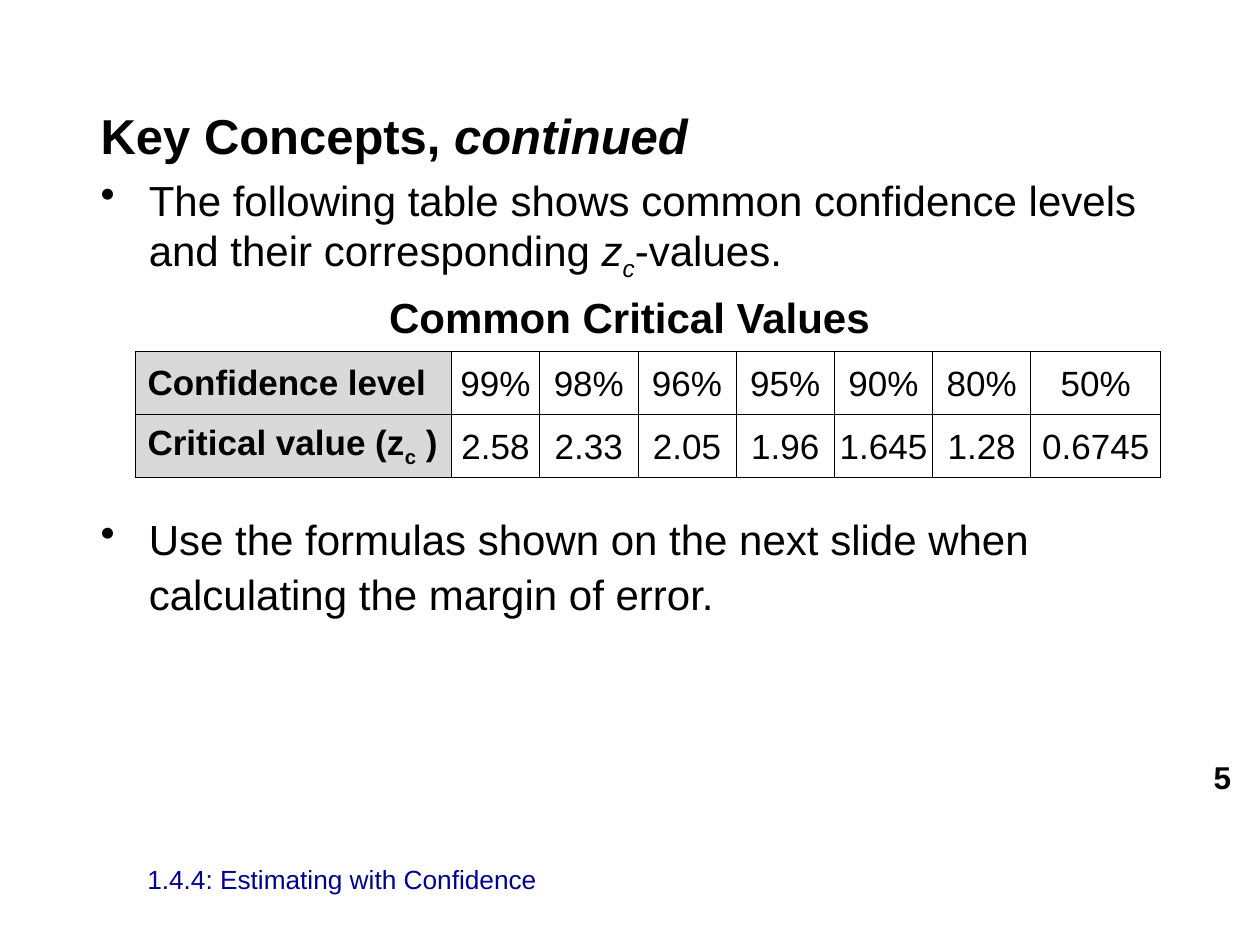
import pptx
import pptx.util
import pptx.dml.color
import pptx.enum.text
import lxml.etree

Cm = pptx.util.Cm
Pt = pptx.util.Pt
Rgb = pptx.dml.color.RGBColor.from_string
Align = pptx.enum.text.PP_ALIGN
Anchor = pptx.enum.text.MSO_ANCHOR
A = "{http://schemas.openxmlformats.org/drawingml/2006/main}"
ink = {"text": "000000", "foot": "000090", "head": "D9D9D9", "cell": "FFFFFF"}


def write(para, runs, size, bold=False, color="text", align=Align.LEFT):
    para.alignment = align
    font = para.font
    font.name, font.size, font.bold = "Arial", Pt(size), bold
    font.color.rgb = Rgb(ink[color])
    for text, style in runs:
        run = para.add_run()
        run.text = text
        if "i" in style:
            run.font.italic = True
        if "s" in style:
            run.font._element.set("baseline", "-25000")


def add_box(left, top, width, height, anchor):
    frame = slide.shapes.add_textbox(Cm(left), Cm(top), Cm(width), Cm(height)).text_frame
    frame.word_wrap = True
    frame.vertical_anchor = anchor
    return frame


deck = pptx.Presentation()
deck.slide_width, deck.slide_height = Cm(25.4), Cm(19.05)
slide = deck.slides.add_slide(deck.slide_layouts[6])

body = add_box(1.78, 1.89, 21.82, 14.52, Anchor.TOP)
lines = [
    ([("Key Concepts, ", ""), ("continued", "i")], 28, True, False, 1.1, 0),
    ([("The following table shows common confidence levels and their corresponding ", ""),
      ("z", "i"), ("c", "is"), ("-values.", "")], 24, False, True, 1, 5.5),
    ([("Common Critical Values", "")], 24, True, False, 1, 5.5),
    ([("Use the formulas shown on the next slide when calculating the margin of error.", "")],
     24, False, True, 1.1, 95),
]
for row, (runs, size, bold, dot, space, gap) in enumerate(lines):
    para = body.paragraphs[0] if row == 0 else body.add_paragraph()
    para.line_spacing = space
    para.space_before = Pt(gap)
    if dot:
        props = para._p.get_or_add_pPr()
        props.set("marL", str(Cm(0.97)))
        props.set("indent", str(-Cm(0.97)))
        lxml.etree.SubElement(props, A + "buChar", char="•")
    write(para, runs, size, bold, align=Align.CENTER if row == 2 else Align.LEFT)

page = add_box(23.04, 15.27, 2.03, 0.79, Anchor.MIDDLE)
write(page.paragraphs[0], [("5", "")], 18, True, align=Align.RIGHT)
foot = add_box(2.72, 17.35, 15.95, 0.74, Anchor.MIDDLE)
write(foot.paragraphs[0], [("1.4.4: Estimating with Confidence", "")], 15, color="foot")

heads = [
    [("Confidence level", "")],
    [("Critical value (z", ""), ("c", "s"), (" )", "")],
]
values = [
    ["99%", "98%", "96%", "95%", "90%", "80%", "50%"],
    ["2.58", "2.33", "2.05", "1.96", "1.645", "1.28", "0.6745"],
]
widths = [6.38, 1.78] + [1.98] * 5 + [2.62]
table = slide.shapes.add_table(2, 8, Cm(2.72), Cm(7.09), Cm(sum(widths)), Cm(2.54)).table
for col, width in zip(table.columns, widths):
    col.width = Cm(width)
for r, (head, nums) in enumerate(zip(heads, values)):
    table.rows[r].height = Cm(1.27)
    for c, runs in enumerate([head] + [[(num, "")] for num in nums]):
        cell = table.cell(r, c)
        cell.vertical_anchor = Anchor.MIDDLE
        if c:
            cell.margin_left = cell.margin_right = cell.margin_top = Cm(0.03)
            cell.margin_bottom = 0
        props = cell._tc.get_or_add_tcPr()
        for side in ("lnL", "lnR", "lnT", "lnB"):
            line = lxml.etree.SubElement(props, A + side, w=str(Pt(0.5)))
            fill = lxml.etree.SubElement(line, A + "solidFill")
            lxml.etree.SubElement(fill, A + "srgbClr", val=ink["text"])
        cell.fill.solid()
        cell.fill.fore_color.rgb = Rgb(ink["cell" if c else "head"])
        write(cell.text_frame.paragraphs[0], runs, 20, c == 0,
              align=Align.CENTER if c else Align.LEFT)

deck.save("out.pptx")
